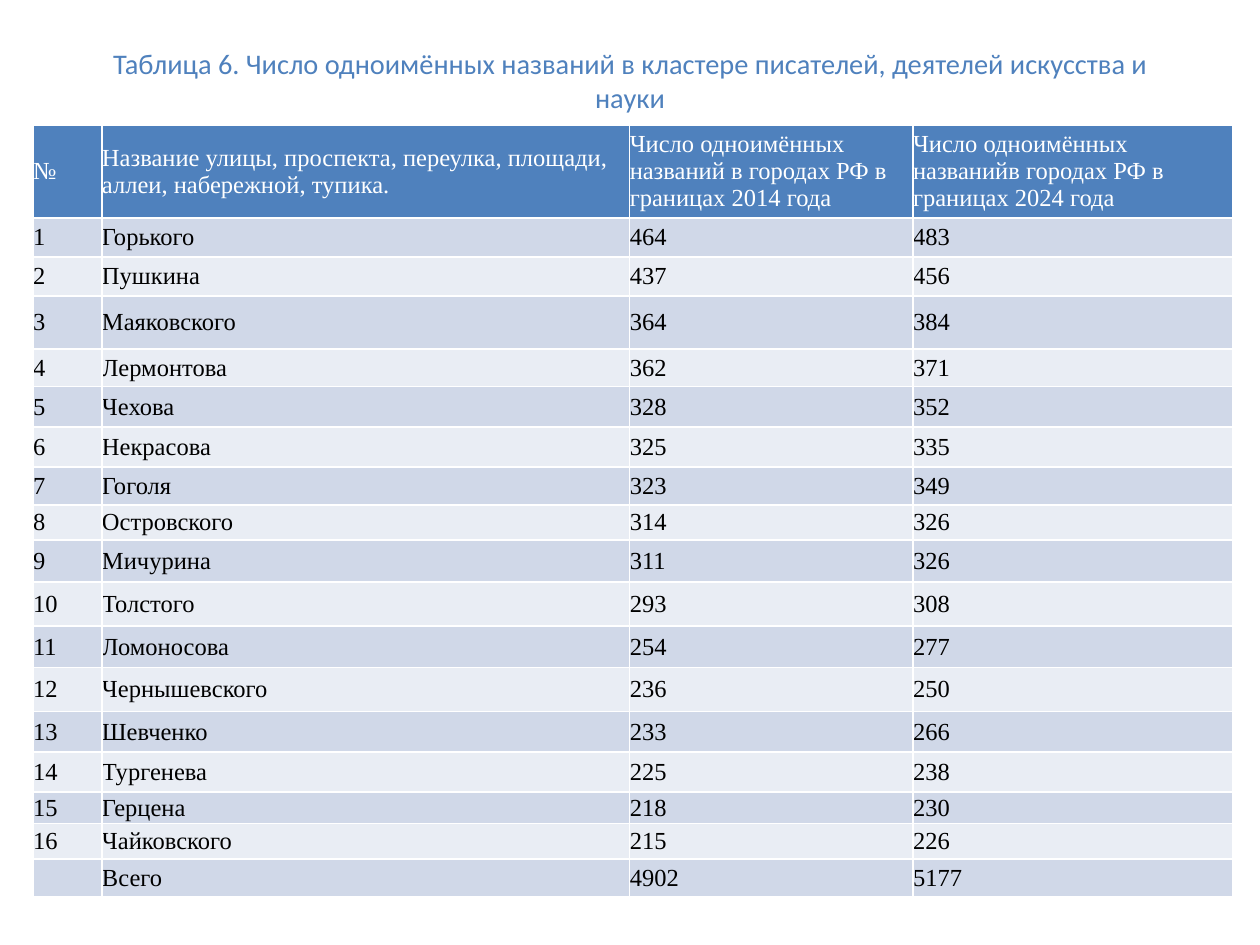
from pptx import Presentation
from pptx import util as u
from pptx.dml.color import RGBColor
from pptx.enum import text

BLUE = RGBColor(0x4F, 0x81, 0xBD)
WHITE = RGBColor(0xFF, 0xFF, 0xFF)
BLACK = RGBColor(0, 0, 0)
BANDS = (RGBColor(0xD0, 0xD8, 0xE8), RGBColor(0xE9, 0xED, 0xF4))

TITLE = "Таблица 6. Число одноимённых названий в кластере писателей, деятелей искусства и науки"
HEADER = (
    "№",
    "Название улицы, проспекта, переулка, площади, аллеи, набережной, тупика.",
    "Число одноимённых названий в городах РФ в границах 2014 года",
    "Число одноимённых названийв городах РФ в границах 2024 года",
)
# Street name, count in 2014, count in 2024, row height in points
STREETS = (
    ("Горького", 464, 483, 22.3),
    ("Пушкина", 437, 456, 22.3),
    ("Маяковского", 364, 384, 30.2),
    ("Лермонтова", 362, 371, 21.6),
    ("Чехова", 328, 352, 23),
    ("Некрасова", 325, 335, 23),
    ("Гоголя", 323, 349, 21.6),
    ("Островского", 314, 326, 20.2),
    ("Мичурина", 311, 326, 23.8),
    ("Толстого", 293, 308, 25.2),
    ("Ломоносова", 254, 277, 23.8),
    ("Чернышевского", 236, 250, 25.2),
    ("Шевченко", 233, 266, 23),
    ("Тургенева", 225, 238, 23),
    ("Герцена", 218, 230, 18),
    ("Чайковского", 215, 226, 20.2),
)
TOTAL = ("", "Всего", 4902, 5177)
HEADER_HEIGHT, TOTAL_HEIGHT = 53.3, 17.3
COLUMN_WIDTHS = (39.4, 301.6, 161.9, 182.6)

TITLE_FORMAT = {"name": "Calibri", "size": u.Pt(16.2), "bold": False}
CELL_FORMAT = {"name": "Times New Roman", "size": u.Pt(14), "bold": False}
CELL_LAYOUT = {
    "margin_left": 0, "margin_top": 0, "margin_right": 0, "margin_bottom": 0,
    "vertical_anchor": text.MSO_ANCHOR.MIDDLE,
}


def set_values(target, values):
    for name, value in values.items():
        setattr(target, name, value)


def add_text(paragraph, content, values, color):
    run = paragraph.add_run()
    run.text = content
    set_values(run.font, values)
    run.font.color.rgb = color


def add_title(slide, left, top, width, height):
    box = slide.shapes.add_textbox(u.Pt(left), u.Pt(top), u.Pt(width), u.Pt(height))
    frame = box.text_frame
    set_values(frame, {"word_wrap": True, "vertical_anchor": text.MSO_ANCHOR.MIDDLE})
    paragraph = frame.paragraphs[0]
    paragraph.alignment = text.PP_ALIGN.CENTER
    add_text(paragraph, TITLE, TITLE_FORMAT, BLUE)


def add_street_table(slide, left, top):
    numbered = [(number, *street[:3]) for number, street in enumerate(STREETS, 1)]
    rows = [HEADER, *numbered, TOTAL]
    heights = [HEADER_HEIGHT, *(street[3] for street in STREETS), TOTAL_HEIGHT]
    table = slide.shapes.add_table(
        len(rows), len(COLUMN_WIDTHS), u.Pt(left), u.Pt(top),
        u.Pt(sum(COLUMN_WIDTHS)), u.Pt(sum(heights)),
    ).table
    for column, width in zip(table.columns, COLUMN_WIDTHS):
        column.width = u.Pt(width)

    # Blue header, then alternating bands; the table style draws the white borders
    for index, (values, height) in enumerate(zip(rows, heights)):
        table.rows[index].height = u.Pt(height)
        fill, color = (BANDS[(index - 1) % 2], BLACK) if index else (BLUE, WHITE)
        for cell, value in zip(table.rows[index].cells, values):
            set_values(cell, CELL_LAYOUT)
            cell.fill.solid()
            cell.fill.fore_color.rgb = fill
            add_text(cell.text_frame.paragraphs[0], str(value), CELL_FORMAT, color)


def main():
    presentation = Presentation()
    presentation.slide_width, presentation.slide_height = u.Pt(720), u.Pt(540)
    slide = presentation.slides.add_slide(presentation.slide_layouts[6])
    add_title(slide, 36, 21.6, 648, 48.2)
    add_street_table(slide, 18.9, 71.3)
    presentation.save("out.pptx")


if __name__ == "__main__":
    main()
